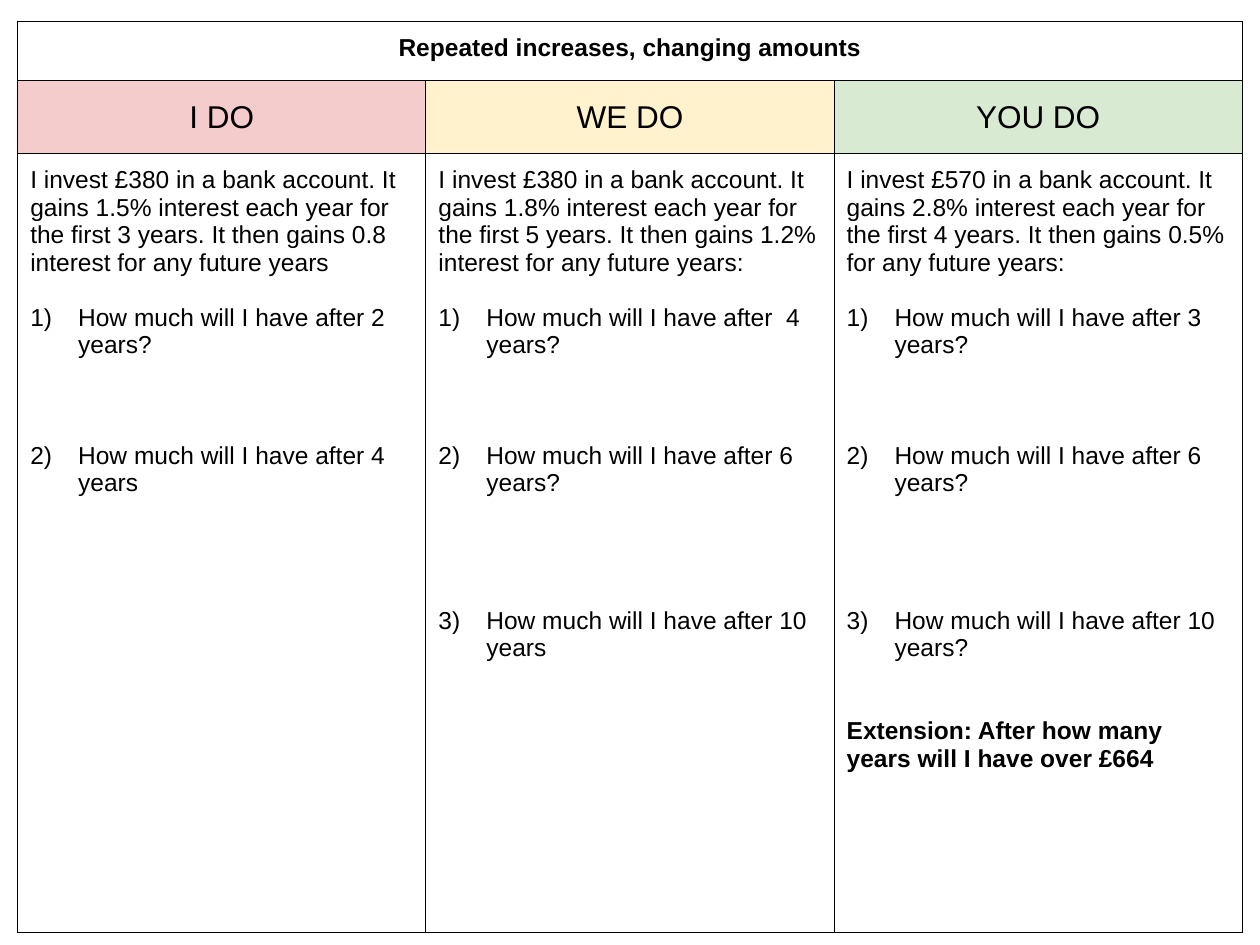
import pptx
import pptx.util
import pptx.dml.color
import pptx.enum.text
import pptx.oxml
import pptx.oxml.ns
from lxml import etree

Inches, Pt = pptx.util.Inches, pptx.util.Pt
qn = pptx.oxml.ns.qn
CENTER = pptx.enum.text.PP_ALIGN.CENTER
MIDDLE = pptx.enum.text.MSO_ANCHOR.MIDDLE
LINE = 15.75  # height of one text line in points


def color(code):
    return pptx.dml.color.RGBColor.from_string(code)


def write(para, text, size=14, bold=False):
    para.text = text
    font = para.font
    font.name, font.size, font.bold = "Arial", Pt(size), bold
    font.color.rgb = color("000000")


# heading, fill, intro, questions, extension
tasks = [
    ("I DO", "F4CCCC",
     "I invest £380 in a bank account. It gains 1.5% interest each year for "
     "the first 3 years. It then gains 0.8 interest for any future years",
     ["How much will I have after 2 years?",
      "How much will I have after 4 years"], None),
    ("WE DO", "FFF2CC",
     "I invest £380 in a bank account. It gains 1.8% interest each year for "
     "the first 5 years. It then gains 1.2% interest for any future years:",
     ["How much will I have after  4 years?",
      "How much will I have after 6 years?",
      "How much will I have after 10 years"], None),
    ("YOU DO", "D9EAD3",
     "I invest £570 in a bank account. It gains 2.8% interest each year for "
     "the first 4 years. It then gains 0.5% for any future years:",
     ["How much will I have after 3 years?",
      "How much will I have after 6 years?",
      "How much will I have after 10 years?"],
     "Extension: After how many years will I have over £664"),
]
gaps = [1, 3, 4]  # lines left free above each question

prs = pptx.Presentation()
prs.slide_width, prs.slide_height = Inches(10), Inches(7.5)
slide = prs.slides.add_slide(prs.slide_layouts[6])

heights = [0.47, 0.58, 6.18]
table = slide.shapes.add_table(
    3, 3, Inches(0.14), Inches(0.17), Inches(9.72), Inches(sum(heights))).table
table.first_row = table.horz_banding = False
for col in table.columns:
    col.width = Inches(3.24)
for row, height in zip(table.rows, heights):
    row.height = Inches(height)

for cell in table.iter_cells():
    cell.margin_left = cell.margin_right = Inches(0.1)
    cell.margin_top = cell.margin_bottom = Inches(0.1)
    props = cell._tc.get_or_add_tcPr()
    for side in ("lnL", "lnR", "lnT", "lnB"):
        edge = etree.SubElement(props, qn("a:" + side), w=str(Pt(0.75)))
        solid = etree.SubElement(edge, qn("a:solidFill"))
        etree.SubElement(solid, qn("a:srgbClr"), val="000000")
    cell.fill.background()

title = table.cell(0, 0)
title.merge(table.cell(0, 2))
para = title.text_frame.paragraphs[0]
write(para, "Repeated increases, changing amounts", bold=True)
para.alignment = CENTER

for col, (name, fill, intro, asks, extra) in enumerate(tasks):
    head = table.cell(1, col)
    head.fill.solid()
    head.fill.fore_color.rgb = color(fill)
    head.vertical_anchor = MIDDLE
    para = head.text_frame.paragraphs[0]
    write(para, name, size=18)
    para.alignment = CENTER

    frame = table.cell(2, col).text_frame
    write(frame.paragraphs[0], intro)
    for ask, gap in zip(asks, gaps):
        para = frame.add_paragraph()
        para.space_before = Pt(gap * LINE)
        props = para._p.get_or_add_pPr()
        props.set("marL", str(Inches(0.38)))
        props.set("indent", str(-Inches(0.38)))
        etree.SubElement(props, qn("a:buAutoNum"), type="arabicParenR")
        write(para, ask)
    if extra:
        para = frame.add_paragraph()
        para.space_before = Pt(2 * LINE)
        write(para, extra, bold=True)

prs.save("out.pptx")
